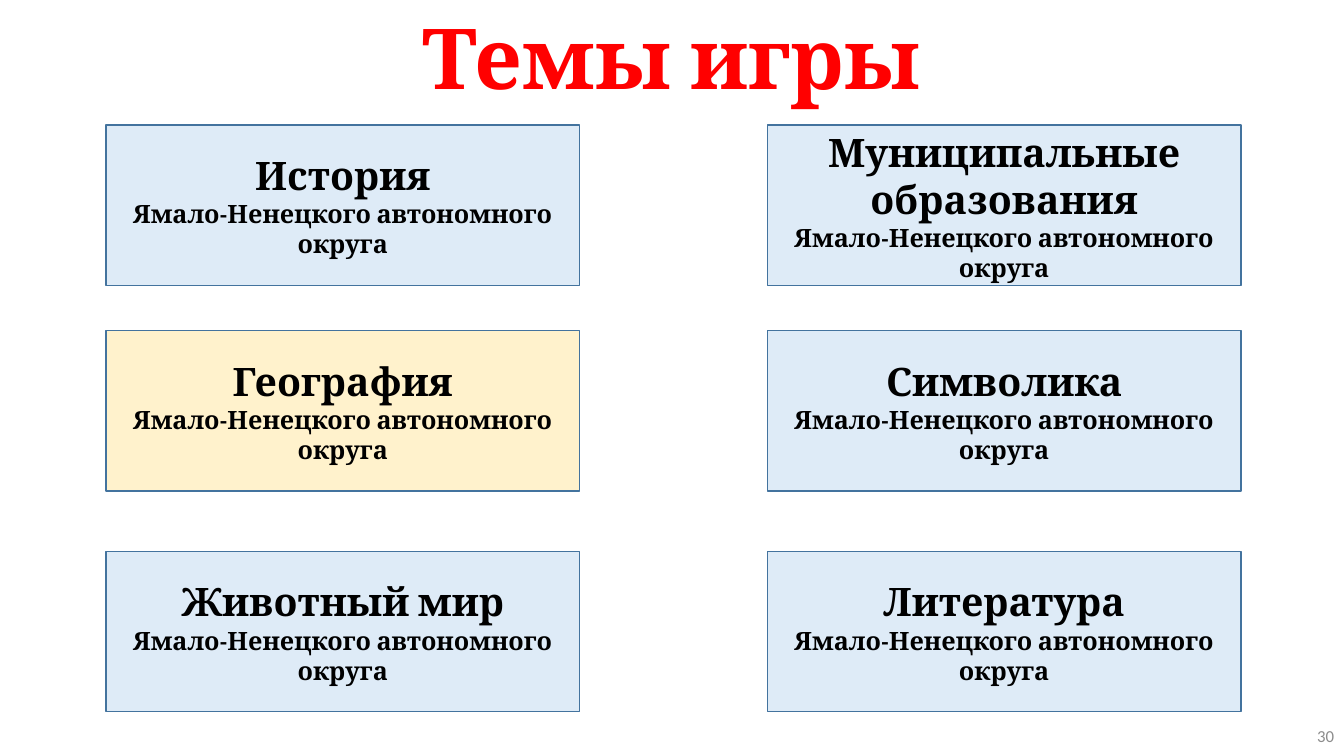
from pptx import Presentation
from pptx.dml.color import RGBColor
from pptx.enum.shapes import MSO_SHAPE
from pptx.enum.text import MSO_ANCHOR, PP_ALIGN
from pptx.util import Inches, Pt

# Content
TITLE = "Темы игры"
REGION = "Ямало-Ненецкого автономного округа"
TOPICS = [
    ["История", "Муниципальные образования"],
    ["География", "Символика"],
    ["Животный мир", "Литература"],
]
CURRENT_TOPIC = "География"
PAGE_NUMBER = "30"

# Look
RED = RGBColor(0xFF, 0x00, 0x00)
BLACK = RGBColor(0x00, 0x00, 0x00)
GREY = RGBColor(0x8C, 0x8C, 0x8C)
PALE_BLUE = RGBColor(0xDE, 0xEB, 0xF7)
PALE_YELLOW = RGBColor(0xFF, 0xF2, 0xCC)
BORDER = RGBColor(0x43, 0x73, 0x9E)
RECTANGLE = MSO_SHAPE.RECTANGLE
MIDDLE = MSO_ANCHOR.MIDDLE
CENTER, RIGHT = PP_ALIGN.CENTER, PP_ALIGN.RIGHT

# Grid, in inches
SLIDE_W, SLIDE_H = 13.33, 7.5
COLUMNS = [1.05, 7.61]
ROWS = [1.24, 3.28, 5.47]
CARD_W, CARD_H = 4.7, 1.59
TITLE_W, TITLE_H = 12.62, 1.24
NUMBER_W, NUMBER_H = 3, 0.4


def write(p, text, size, color=BLACK, font="Cambria", bold=True, align=CENTER):
    p.alignment = align
    r = p.add_run()
    r.text = text
    r.font.size = Pt(size)
    r.font.name = font
    r.font.bold = bold
    r.font.color.rgb = color


def place(sp, left, top, width, height):
    sp.left, sp.top = Inches(left), Inches(top)
    sp.width, sp.height = Inches(width), Inches(height)


prs = Presentation()
prs.slide_width, prs.slide_height = Inches(SLIDE_W), Inches(SLIDE_H)
s = prs.slides.add_slide(prs.slide_layouts[5])

# Title
title = s.shapes.title
place(title, (SLIDE_W - TITLE_W) / 2, 0, TITLE_W, TITLE_H)
tf = title.text_frame
tf.vertical_anchor = MIDDLE
tf.paragraphs[0].line_spacing = 0.9
write(tf.paragraphs[0], TITLE, 60, color=RED)

# Topic cards
for top, names in zip(ROWS, TOPICS):
    for left, name in zip(COLUMNS, names):
        box = [Inches(v) for v in (left, top, CARD_W, CARD_H)]
        sp = s.shapes.add_shape(RECTANGLE, *box)
        sp.shadow.inherit = False
        sp.fill.solid()
        sp.fill.fore_color.rgb = PALE_YELLOW if name == CURRENT_TOPIC else PALE_BLUE
        sp.line.color.rgb = BORDER
        sp.line.width = Pt(1)
        tf = sp.text_frame
        tf.word_wrap = True
        tf.vertical_anchor = MIDDLE
        write(tf.paragraphs[0], name, 28)
        write(tf.add_paragraph(), REGION, 18)

# Page number
box = (SLIDE_W - NUMBER_W, SLIDE_H - NUMBER_H, NUMBER_W, NUMBER_H)
tf = s.shapes.add_textbox(*[Inches(v) for v in box]).text_frame
tf.word_wrap = True
tf.vertical_anchor = MIDDLE
write(tf.paragraphs[0], PAGE_NUMBER, 12, color=GREY, font="Calibri",
      bold=False, align=RIGHT)

prs.save("out.pptx")
